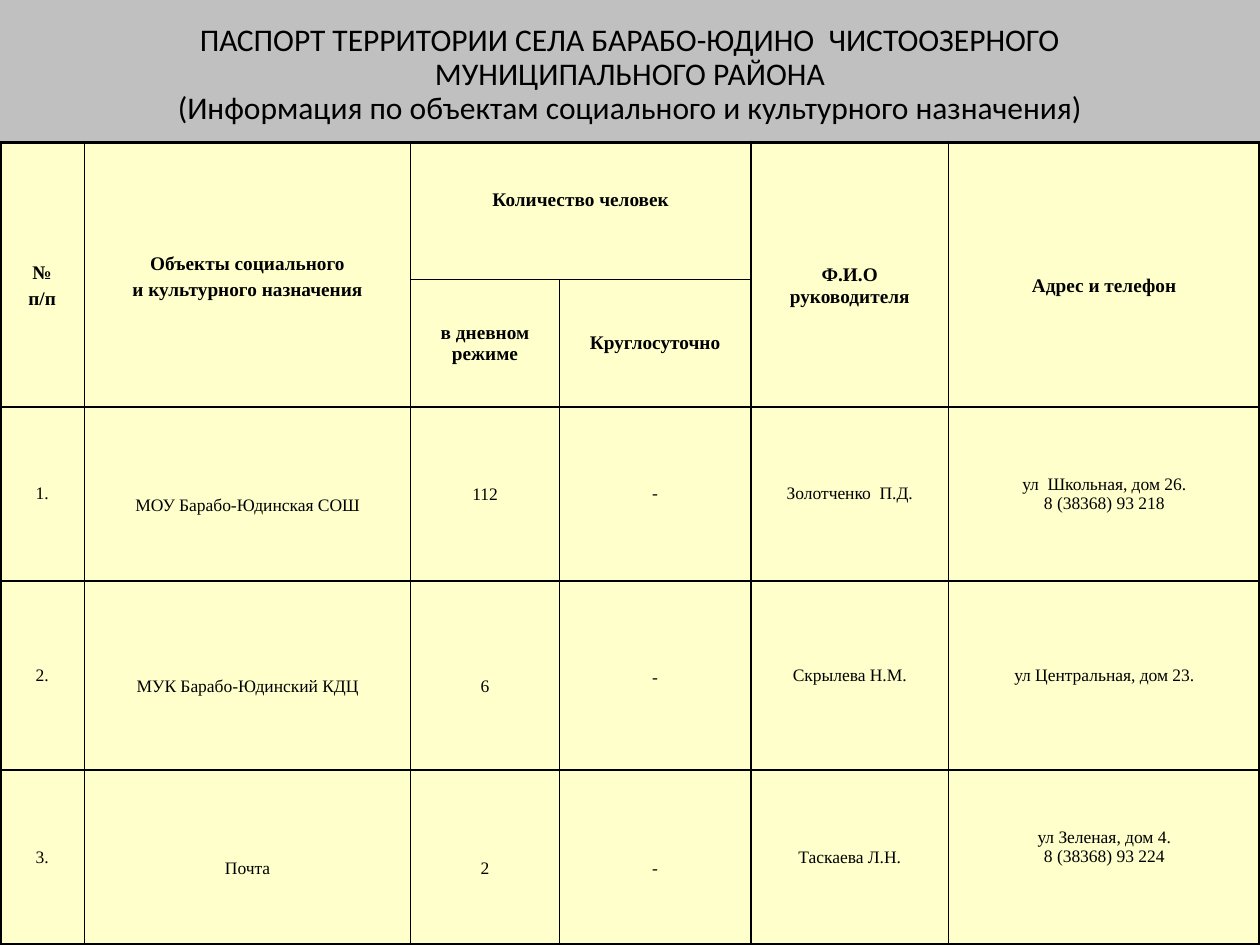
from lxml.etree import SubElement
from pptx import Presentation
from pptx.dml.color import RGBColor
from pptx.enum.text import MSO_ANCHOR, MSO_AUTO_SIZE, PP_ALIGN
from pptx.oxml.ns import qn
from pptx.util import Inches, Pt

BLACK = RGBColor(0x00, 0x00, 0x00)
CREAM = RGBColor(0xFF, 0xFF, 0xCC)
SILVER = RGBColor(0xC0, 0xC0, 0xC0)

PAGE_WIDTH, PAGE_HEIGHT, TITLE_HEIGHT = 10, 7.5, 1.13
COLUMNS = [0.67, 2.59, 1.18, 1.52, 1.57, 2.47]
ROWS = [1.09, 1.01, 1.38, 1.5, 1.39]
HEADER_ROWS = 2
INNER_LINE, OUTER_LINE = 1, 2.25
SIDE_MARGIN, END_MARGIN = 0.1, 0.05

TITLE = [
    "ПАСПОРТ ТЕРРИТОРИИ СЕЛА БАРАБО-ЮДИНО  ЧИСТООЗЕРНОГО",
    "МУНИЦИПАЛЬНОГО РАЙОНА",
    "(Информация по объектам социального и культурного назначения)",
]
MERGES = [((0, 0), (1, 0)), ((0, 1), (1, 1)), ((0, 2), (0, 3)),
          ((0, 4), (1, 4)), ((0, 5), (1, 5))]
TEXTS = [
    ["№\nп/п", "Объекты социального\nи культурного назначения",
     "Количество человек", None, "Ф.И.О руководителя", "Адрес и телефон"],
    [None, None, "в дневном режиме", "Круглосуточно", None, None],
    ["1.", "МОУ Барабо-Юдинская СОШ", "112", "-", "Золотченко  П.Д.",
     "ул  Школьная, дом 26.\n8 (38368) 93 218"],
    ["2.", "МУК Барабо-Юдинский КДЦ", "6", "-", "Скрылева Н.М.",
     "ул Центральная, дом 23."],
    ["3.", "Почта", "2", "-", "Таскаева Л.Н.",
     "ул Зеленая, дом 4.\n8 (38368) 93 224"],
]
# Inches by which the text of a cell sits below (or above) its middle
DROPS = [
    [0.09, 0.02, -0.09, 0, 0.09, 0.09],
    [0, 0, 0, 0, 0, 0],
    [0, 0.09, 0.01, 0, 0, 0],
    [0, 0.09, 0.09, 0.02, 0, 0],
    [0, 0.09, 0.09, 0.09, 0, -0.08],
]


def write_lines(frame, lines, name, size, bold=False):
    frame.word_wrap = True
    frame.text = "\n".join(lines)
    for para in frame.paragraphs:
        para.alignment = PP_ALIGN.CENTER
        para.font.name = name
        para.font.size = Pt(size)
        para.font.bold = bold
        para.font.color.rgb = BLACK


def add_title(page, left, top, width, height):
    title = page.shapes.title
    title.left, title.top = Inches(left), Inches(top)
    title.width, title.height = Inches(width), Inches(height)
    title.fill.solid()
    title.fill.fore_color.rgb = SILVER
    frame = title.text_frame
    frame.auto_size = MSO_AUTO_SIZE.NONE
    frame.vertical_anchor = MSO_ANCHOR.MIDDLE
    frame.margin_left = frame.margin_right = Inches(0.04)
    frame.margin_top, frame.margin_bottom = Inches(0.08), Inches(0.02)
    write_lines(frame, TITLE, "Calibri", 18)
    for para in frame.paragraphs:
        para.line_spacing = 0.9
        para.space_before = Pt(0)


def set_borders(cell, row, column):
    """Draw thin inner lines and a thick frame round the whole table."""
    last_row, last_column = len(ROWS) - 1, len(COLUMNS) - 1
    bottom = row + cell.span_height - 1 if cell.is_merge_origin else row
    right = column + cell.span_width - 1 if cell.is_merge_origin else column
    outer = {"a:lnL": column == 0, "a:lnR": right == last_column,
             "a:lnT": row == 0, "a:lnB": bottom == last_row}
    properties = cell._tc.get_or_add_tcPr()
    for tag, is_outer in outer.items():
        weight = Pt(OUTER_LINE if is_outer else INNER_LINE)
        line = SubElement(properties, qn(tag), w=str(weight))
        fill = SubElement(line, qn("a:solidFill"))
        SubElement(fill, qn("a:srgbClr"), val=str(BLACK))


def fill_cell(cell, row, column):
    set_borders(cell, row, column)
    cell.fill.solid()
    cell.fill.fore_color.rgb = CREAM
    drop = DROPS[row][column]
    cell.vertical_anchor = MSO_ANCHOR.MIDDLE
    cell.margin_left = cell.margin_right = Inches(SIDE_MARGIN)
    cell.margin_top = Inches(END_MARGIN + 2 * max(drop, 0))
    cell.margin_bottom = Inches(END_MARGIN + 2 * max(-drop, 0))
    is_header = row < HEADER_ROWS
    lines = TEXTS[row][column].split("\n")
    write_lines(cell.text_frame, lines, "Times New Roman",
                11 if is_header else 10, is_header)
    if is_header:
        for para in cell.text_frame.paragraphs[1:]:
            para.space_before = Pt(2.2)


def add_facility_table(page, left, top, width, height):
    table = page.shapes.add_table(
        len(ROWS), len(COLUMNS), Inches(left), Inches(top),
        Inches(width), Inches(height)).table
    table.first_row = table.horz_banding = False
    for column, share in zip(table.columns, COLUMNS):
        column.width = Inches(width * share / sum(COLUMNS))
    for row, share in zip(table.rows, ROWS):
        row.height = Inches(height * share / sum(ROWS))
    for first, last in MERGES:
        table.cell(*first).merge(table.cell(*last))
    for row in range(len(ROWS)):
        for column in range(len(COLUMNS)):
            cell = table.cell(row, column)
            if not cell.is_spanned:
                fill_cell(cell, row, column)


def main():
    deck = Presentation()
    deck.slide_width, deck.slide_height = Inches(PAGE_WIDTH), Inches(PAGE_HEIGHT)
    page = deck.slides.add_slide(deck.slide_layouts[5])
    add_title(page, 0, 0, PAGE_WIDTH, TITLE_HEIGHT)
    add_facility_table(page, 0, TITLE_HEIGHT, PAGE_WIDTH,
                       PAGE_HEIGHT - TITLE_HEIGHT)
    deck.save("out.pptx")


if __name__ == "__main__":
    main()
